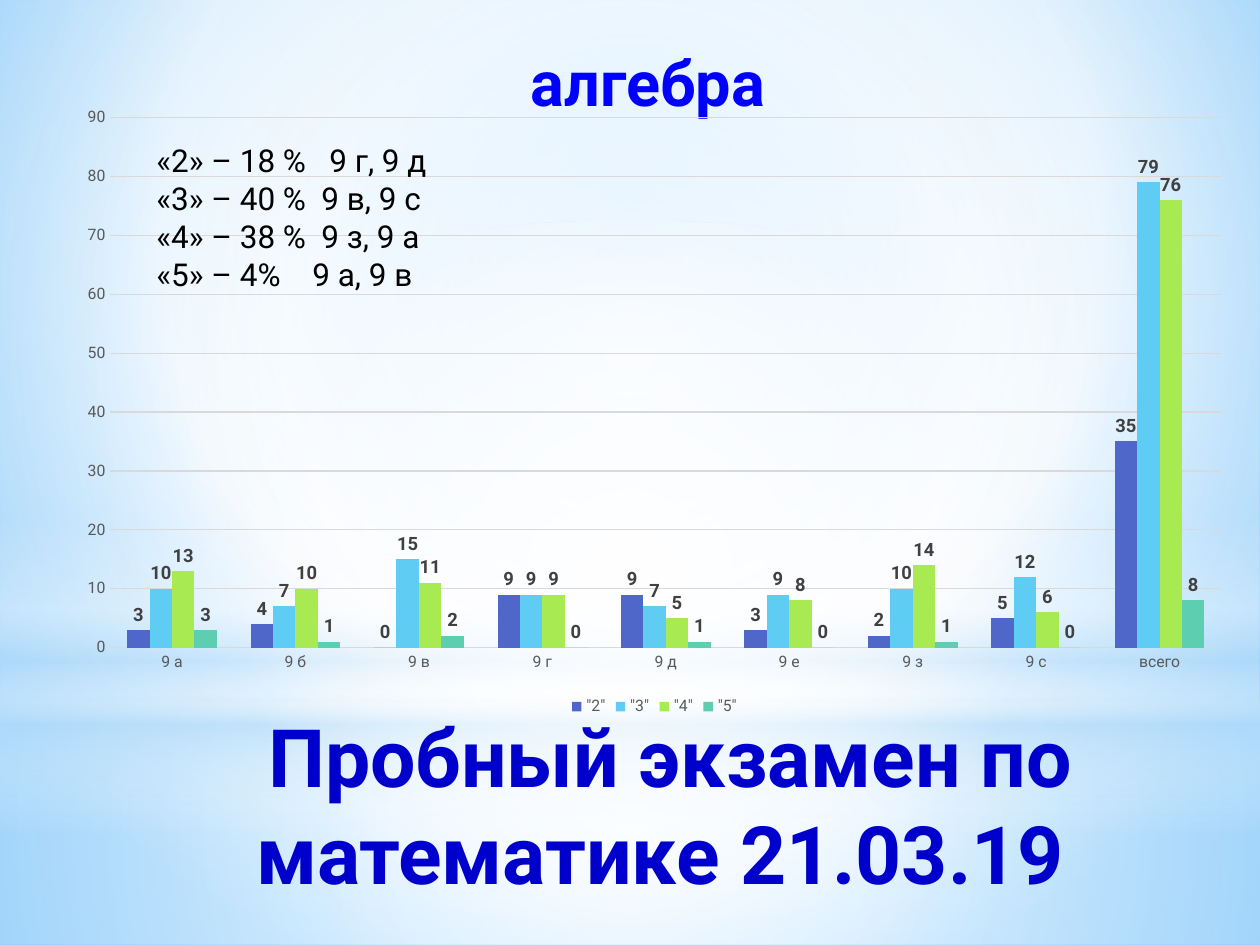
from lxml import etree
from pptx import Presentation
from pptx import util as u
from pptx.chart import data as cd
from pptx.dml.color import RGBColor
from pptx.enum import chart as ce
from pptx.enum import shapes, text
from pptx.oxml import ns

SCALE = 914400 / 126
FONT = "Roboto"
WHITE = RGBColor(0xFF, 0xFF, 0xFF)
PALE = RGBColor(0xB4, 0xDC, 0xFA)
SKY = RGBColor(0x9E, 0xD5, 0xFF)
AZURE = RGBColor(0x5B, 0xB9, 0xFF)
NAVY = RGBColor(0x00, 0x00, 0xCC)
BLUE = RGBColor(0x00, 0x00, 0xFF)
BLACK = RGBColor(0x00, 0x00, 0x00)
GREY = RGBColor(0x59, 0x59, 0x59)
DARK = RGBColor(0x40, 0x40, 0x40)
GRID = RGBColor(0xD9, 0xD9, 0xD9)

CLASSES = ["9 а", "9 б", "9 в", "9 г", "9 д", "9 е", "9 з", "9 с", "всего"]
GRADES = [
    ('"2"', [3, 4, 0, 9, 9, 3, 2, 5, 35], RGBColor(0x4E, 0x67, 0xC8)),
    ('"3"', [10, 7, 15, 9, 7, 9, 10, 12, 79], RGBColor(0x5E, 0xCC, 0xF3)),
    ('"4"', [13, 10, 11, 9, 5, 8, 14, 6, 76], RGBColor(0xA7, 0xEA, 0x52)),
    ('"5"', [3, 1, 2, 0, 1, 0, 1, 0, 8], RGBColor(0x5D, 0xCE, 0xAF)),
]
SHARES = [
    ("«2» – 18 %", "9 г, 9 д", 173),
    ("«3» – 40 %", "9 в, 9 с", 165),
    ("«4» – 38 %", "9 з, 9 а", 165),
    ("«5» – 4%", "9 а, 9 в", 156),
]
GLOWS = [
    ("RECTANGLE", (0, 703, 1260, 242),
     [(0, WHITE, 91), (37, WHITE, 76), (100, PALE, 79)], (50, 50, 50, 50)),
    ("RECTANGLE", (0, 0, 1260, 703),
     [(0, WHITE, 89), (48, WHITE, 62), (100, PALE, 79)], (50, 50, 50, 50)),
    ("RECTANGLE", (0, 519, 1260, 315),
     [(0, WHITE, 0), (29, WHITE, 30), (45, PALE, 40), (55, WHITE, 26),
      (65, PALE, 60), (100, WHITE, 0)], None),
    ("OVAL", (0, 221, 1260, 703),
     [(0, WHITE, 100), (56, WHITE, 0)], (50, 50, 50, 50)),
]


def px(length):
    """Turn px into EMU."""
    return u.Emu(round(length * SCALE))


def apply(target, values):
    """Set each named attribute on the target."""
    for name, value in values.items():
        setattr(target, name, value)


def set_font(font, size, color, bold=False):
    """Give a font its face, size, weight and colour."""
    apply(font, {"name": FONT, "size": u.Pt(size), "bold": bold})
    font.color.rgb = color


def set_gradient(fill, owner, stops, focus):
    """Fill with colour stops, round about a focus or straight down."""
    fill.gradient()
    gradient = owner.find(ns.qn("a:gradFill"))
    for child in list(gradient):
        gradient.remove(child)
    stop_list = etree.SubElement(gradient, ns.qn("a:gsLst"))
    for position, color, opacity in stops:
        stop = etree.SubElement(stop_list, ns.qn("a:gs"), pos=str(position * 1000))
        shade = etree.SubElement(stop, ns.qn("a:srgbClr"), val=str(color))
        if opacity < 100:
            etree.SubElement(shade, ns.qn("a:alpha"), val=str(opacity * 1000))
    if focus:
        circle = etree.SubElement(gradient, ns.qn("a:path"), path="circle")
        sides = {side: str(part * 1000) for side, part in zip("ltrb", focus)}
        etree.SubElement(circle, ns.qn("a:fillToRect"), **sides)
    else:
        etree.SubElement(gradient, ns.qn("a:lin"), ang="5400000", scaled="0")


def add_backdrop(slide):
    """Paint the background and the glows that lie over it."""
    fill = slide.background.fill
    fill.solid()
    owner = slide.element.find(".//" + ns.qn("p:bgPr"))
    set_gradient(fill, owner, [(0, SKY, 100), (60, WHITE, 100), (100, AZURE, 100)],
                 (20, 10, 20, 60))
    for kind, box, stops, focus in GLOWS:
        glow = slide.shapes.add_shape(shapes.MSO_SHAPE[kind], *map(px, box))
        glow.shadow.inherit = False
        glow.line.fill.background()
        set_gradient(glow.fill, glow.element.spPr, stops, focus)


def add_heading(slide, box, wording, size, color, wrap):
    """Write a bold centred heading in the box."""
    frame = slide.shapes.add_textbox(*map(px, box)).text_frame
    apply(frame, {"word_wrap": wrap, "vertical_anchor": text.MSO_ANCHOR.TOP})
    line = frame.paragraphs[0]
    line.alignment = text.PP_ALIGN.CENTER
    run = line.add_run()
    run.text = wording
    set_font(run.font, size, color, True)


def add_shares(slide, box):
    """List each grade's share and its classes, set off by a tab."""
    frame = slide.shapes.add_textbox(*map(px, box)).text_frame
    frame.word_wrap = True
    for index, (share, classes, indent) in enumerate(SHARES):
        line = frame.add_paragraph() if index else frame.paragraphs[0]
        run = line.add_run()
        run.text = f"{share}\t{classes}"
        set_font(run.font, 18, BLACK)
        tabs = etree.SubElement(line._p.get_or_add_pPr(), ns.qn("a:tabLst"))
        etree.SubElement(tabs, ns.qn("a:tab"), pos=str(px(indent)), algn="l")


def add_grades_chart(slide, box):
    """Chart the number of each grade by class."""
    grades = cd.CategoryChartData(number_format="General")
    grades.categories = CLASSES
    for name, counts, _ in GRADES:
        grades.add_series(name, counts)
    chart = slide.shapes.add_chart(
        ce.XL_CHART_TYPE.COLUMN_CLUSTERED, *map(px, box), grades).chart
    apply(chart, {"has_title": False, "has_legend": True})
    set_font(chart.font, 10, BLACK)
    apply(chart.legend, {"position": ce.XL_LEGEND_POSITION.BOTTOM,
                         "include_in_layout": False})
    set_font(chart.legend.font, 9, GREY)
    for axis in (chart.category_axis, chart.value_axis):
        apply(axis, {"major_tick_mark": ce.XL_TICK_MARK.NONE,
                     "minor_tick_mark": ce.XL_TICK_MARK.NONE})
        axis.format.line.fill.background()
        set_font(axis.tick_labels.font, 9, GREY)
    chart.value_axis.has_major_gridlines = True
    grid = chart.value_axis.major_gridlines.format.line
    grid.color.rgb = GRID
    grid.width = u.Pt(0.75)
    plot = chart.plots[0]
    apply(plot, {"gap_width": 150, "overlap": 0, "vary_by_categories": False})
    for series, (_, _, color) in zip(plot.series, GRADES):
        series.format.fill.solid()
        series.format.fill.fore_color.rgb = color
        labels = series.data_labels
        apply(labels, {"show_value": True,
                       "position": ce.XL_LABEL_POSITION.OUTSIDE_END})
        set_font(labels.font, 10.5, DARK, True)


def main():
    """Build the slide and save it."""
    deck = Presentation()
    apply(deck, {"slide_width": px(1260), "slide_height": px(945)})
    slide = deck.slides.add_slide(deck.slide_layouts[6])
    add_backdrop(slide)
    add_heading(slide, (95, 701, 1150, 238),
                "Пробный экзамен по математике 21.03.19 ", 46, NAVY, True)
    add_heading(slide, (512, 37, 272, 89), "алгебра", 36, BLUE, False)
    add_grades_chart(slide, (64, 96, 1181, 625))
    add_shares(slide, (144, 135, 302, 165))
    deck.save("out.pptx")


if __name__ == "__main__":
    main()
